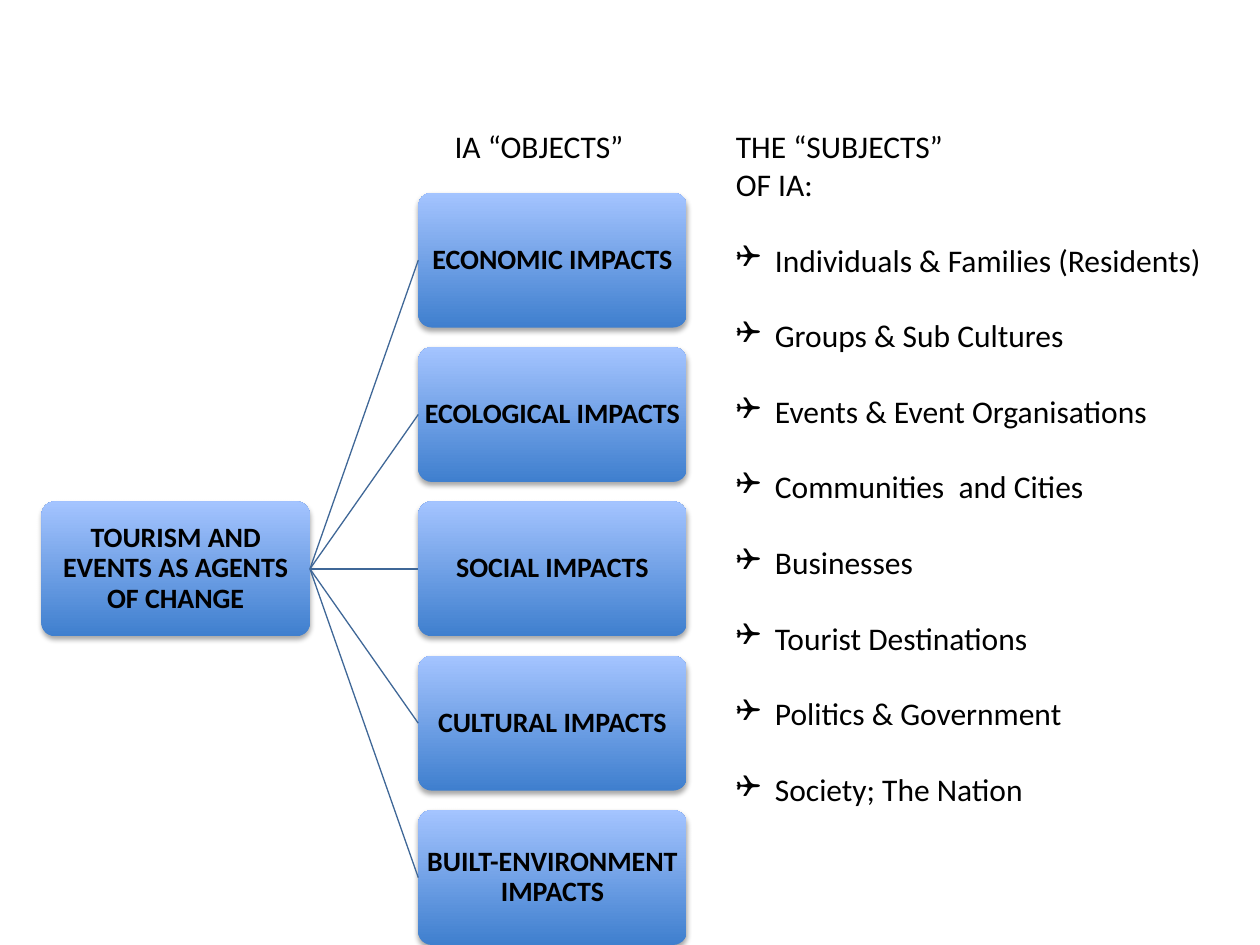
import pptx
import pptx.util
import pptx.dml.color
import pptx.enum.shapes
import pptx.enum.text
import pptx.oxml
import pptx.oxml.ns
import lxml.etree

Inches = pptx.util.Inches
Pt = pptx.util.Pt
NS = pptx.oxml.ns.nsdecls("a")


def rgb(value):
    return pptx.dml.color.RGBColor.from_string(value)


def write(tf, text, size=18, bold=False, align="LEFT", line=1.0, before=0, bullet=None):
    p = tf.paragraphs[0] if not tf.text else tf.add_paragraph()
    p.alignment = getattr(pptx.enum.text.PP_ALIGN, align)
    p.line_spacing = line
    p.space_before = Pt(before)
    pPr = p._p.get_or_add_pPr()
    indent = Inches(0.31) if bullet else 0
    pPr.set("marL", str(indent))
    pPr.set("indent", str(-indent))
    if bullet:
        pPr.append(pptx.oxml.parse_xml(f'<a:buFont {NS} typeface="Wingdings"/>'))
        pPr.append(pptx.oxml.parse_xml(f'<a:buChar {NS} char="{bullet}"/>'))
    else:
        pPr.append(pptx.oxml.parse_xml(f"<a:buNone {NS}/>"))
    r = p.add_run()
    r.text = text
    r.font.name = "Calibri"
    r.font.size = Pt(size)
    r.font.bold = bold
    r.font.color.rgb = rgb("000000")


prs = pptx.Presentation()
prs.slide_width, prs.slide_height = Inches(10), Inches(7.5)
s = prs.slides.add_slide(prs.slide_layouts[1])
title = s.shapes.title
title.element.getparent().remove(title.element)

box_w, box_h, step = 2.13, 1.07, 1.225
root_x, impact_x, top = 0.33, 3.32, 1.53
impacts = ["ECONOMIC IMPACTS", "ECOLOGICAL IMPACTS", "SOCIAL IMPACTS",
           "CULTURAL IMPACTS", "BUILT-ENVIRONMENT IMPACTS"]
nodes = [("TOURISM AND EVENTS AS AGENTS OF CHANGE", root_x, 2)]
nodes += [(text, impact_x, row) for row, text in enumerate(impacts)]

boxes = []
for text, x, row in nodes:
    sp = s.shapes.add_shape(pptx.enum.shapes.MSO_SHAPE.ROUNDED_RECTANGLE, Inches(x),
                            Inches(top + row * step), Inches(box_w), Inches(box_h))
    sp.adjustments[0] = 0.1
    sp.fill.gradient()
    sp.fill.gradient_angle = 90
    for stop, position, color in zip(sp.fill.gradient_stops, (0, 1), ("3F7FCE", "A4C4FF")):
        stop.position = position
        stop.color.rgb = rgb(color)
    sp.line.fill.background()
    sp.element.spPr.append(pptx.oxml.parse_xml(
        f'<a:effectLst {NS}><a:outerShdw blurRad="{Pt(3.1)}" dist="{Pt(1.8)}" dir="5400000" '
        'rotWithShape="0"><a:srgbClr val="000000"><a:alpha val="35000"/></a:srgbClr>'
        '</a:outerShdw></a:effectLst>'))
    tf = sp.text_frame
    tf.word_wrap = True
    tf.vertical_anchor = pptx.enum.text.MSO_ANCHOR.MIDDLE
    tf.margin_left = tf.margin_right = tf.margin_top = tf.margin_bottom = Inches(0.01)
    write(tf, text, size=16, bold=True, align="CENTER", line=0.9)
    boxes.append(sp)

root, *impact_boxes = boxes
for box in impact_boxes:
    line = s.shapes.add_connector(pptx.enum.shapes.MSO_CONNECTOR.STRAIGHT, 0, 0, 0, 0)
    line.begin_connect(root, 3)
    line.end_connect(box, 1)
    line.line.color.rgb = rgb("3F6797")
    line.line.width = Pt(0.75)
    lxml.etree.SubElement(line.element.spPr, pptx.oxml.ns.qn("a:effectLst"))

body = s.placeholders[1]
body.left, body.top, body.width, body.height = (Inches(v) for v in (5.74, 0.96, 4.26, 5.86))
tf = body.text_frame
tf.word_wrap = True
tf.auto_size = pptx.enum.text.MSO_AUTO_SIZE.NONE
write(tf, "THE “SUBJECTS”")
write(tf, "OF IA:")
for text in ["Individuals & Families (Residents)", "Groups & Sub Cultures",
             "Events & Event Organisations", "Communities  and Cities", "Businesses",
             "Tourist Destinations", "Politics & Government", "Society; The Nation"]:
    write(tf, text, before=21.6, bullet="❑")

heading = s.shapes.add_textbox(Inches(3.51), Inches(0.96), Inches(1.83), Inches(0.4))
heading.text_frame.word_wrap = False
write(heading.text_frame, "IA “OBJECTS”")

prs.save("out.pptx")
